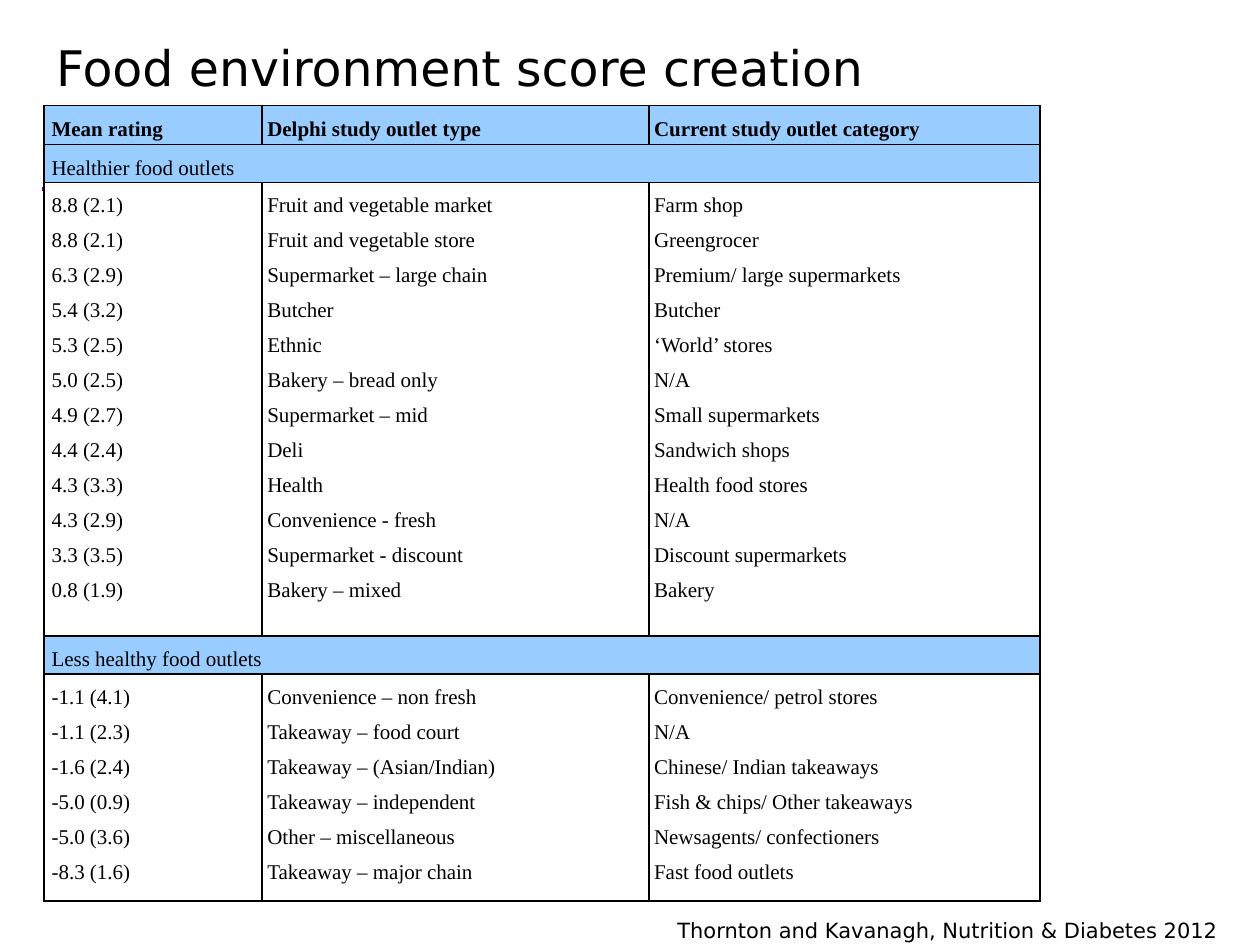
from dataclasses import dataclass

from pptx import Presentation
from pptx.dml.color import RGBColor
from pptx.enum.shapes import MSO_CONNECTOR, MSO_SHAPE
from pptx.enum.text import MSO_ANCHOR
from pptx.oxml import parse_xml
from pptx.oxml.ns import nsdecls
from pptx.util import Pt


@dataclass(frozen=True)
class Theme:
    ink: str = "000000"
    paper: str = "FFFFFF"
    band: str = "99CCFF"
    rule: str = "920049"
    sans: str = "DejaVu Sans"
    serif: str = "Times New Roman"
    title: int = 28
    body: int = 12


HEAD = ["Mean rating", "Delphi study outlet type", "Current study outlet category"]
GOOD = [
    ("8.8 (2.1)", "Fruit and vegetable market", "Farm shop"),
    ("8.8 (2.1)", "Fruit and vegetable store", "Greengrocer"),
    ("6.3 (2.9)", "Supermarket – large chain", "Premium/ large supermarkets"),
    ("5.4 (3.2)", "Butcher", "Butcher"),
    ("5.3 (2.5)", "Ethnic", "‘World’ stores"),
    ("5.0 (2.5)", "Bakery – bread only", "N/A"),
    ("4.9 (2.7)", "Supermarket – mid", "Small supermarkets"),
    ("4.4 (2.4)", "Deli", "Sandwich shops"),
    ("4.3 (3.3)", "Health", "Health food stores"),
    ("4.3 (2.9)", "Convenience - fresh", "N/A"),
    ("3.3 (3.5)", "Supermarket - discount", "Discount supermarkets"),
    ("0.8 (1.9)", "Bakery – mixed", "Bakery"),
]
POOR = [
    ("-1.1 (4.1)", "Convenience – non fresh", "Convenience/ petrol stores"),
    ("-1.1 (2.3)", "Takeaway – food court", "N/A"),
    ("-1.6 (2.4)", "Takeaway – (Asian/Indian)", "Chinese/ Indian takeaways"),
    ("-5.0 (0.9)", "Takeaway – independent", "Fish & chips/ Other takeaways"),
    ("-5.0 (3.6)", "Other – miscellaneous", "Newsagents/ confectioners"),
    ("-8.3 (1.6)", "Takeaway – major chain", "Fast food outlets"),
]


class Page:
    def __init__(self, slide, theme):
        self.slide = slide
        self.theme = theme

    def style(self, para, font, size, bold=False):
        for run in para.runs:
            run.font.name = font
            run.font.size = Pt(size)
            run.font.bold = bold
            run.font.color.rgb = RGBColor.from_string(self.theme.ink)

    def line(self, x, y, end):
        rule = self.slide.shapes.add_connector(
            MSO_CONNECTOR.STRAIGHT, Pt(x), Pt(y), Pt(end), Pt(y))
        rule.line.color.rgb = RGBColor.from_string(self.theme.rule)
        rule.line.width = Pt(1.75)
        rule._element.spPr.append(parse_xml(f"<a:effectLst {nsdecls('a')}/>"))

    def mask(self, x, y, w, h):
        box = self.slide.shapes.add_shape(MSO_SHAPE.RECTANGLE, Pt(x), Pt(y), Pt(w), Pt(h))
        box.shadow.inherit = False
        box.fill.solid()
        box.fill.fore_color.rgb = RGBColor.from_string(self.theme.paper)
        box.line.color.rgb = RGBColor.from_string(self.theme.paper)
        box.line.width = Pt(4)

    def text(self, words, x, y, w, h, size, top=3.6):
        frame = self.slide.shapes.add_textbox(Pt(x), Pt(y), Pt(w), Pt(h)).text_frame
        frame.word_wrap = True
        frame.margin_top = Pt(top)
        frame.text = words
        self.style(frame.paragraphs[0], self.theme.sans, size)

    def cell(self, cell, words, left, fill, bold=False):
        cell.margin_left = Pt(left)
        cell.margin_right = cell.margin_top = cell.margin_bottom = 0
        cell.vertical_anchor = MSO_ANCHOR.TOP
        cell.text_frame.text = words
        for para in cell.text_frame.paragraphs:
            para.line_spacing = 1.5
            self.style(para, self.theme.serif, self.theme.body, bold)
        # Borders come before the fill in the cell properties
        props = cell._tc.get_or_add_tcPr()
        for side in "LRTB":
            props.append(parse_xml(
                f'<a:ln{side} {nsdecls("a")} w="{Pt(1)}"><a:solidFill>'
                f'<a:srgbClr val="{self.theme.ink}"/></a:solidFill></a:ln{side}>'))
        cell.fill.solid()
        cell.fill.fore_color.rgb = RGBColor.from_string(fill)

    def table(self, rows, x, y, widths, heights):
        shape = self.slide.shapes.add_table(
            len(rows), len(widths), Pt(x), Pt(y), Pt(sum(widths)), Pt(sum(heights)))
        grid = shape.table
        grid.first_row = grid.horz_banding = False
        for col, width in zip(grid.columns, widths):
            col.width = Pt(width)
        for i, (row, height) in enumerate(zip(rows, heights)):
            grid.rows[i].height = Pt(height)
            band = len(row) == 1
            if band:
                grid.cell(i, 0).merge(grid.cell(i, len(widths) - 1))
            fill = self.theme.band if band or i == 0 else self.theme.paper
            for j in range(len(widths)):
                words = row[j] if j < len(row) else ""
                self.cell(grid.cell(i, j), words, 3 if j else 4.3, fill, i == 0)


def stack(items):
    """Join each column of a group into one cell, a paragraph per outlet."""
    return ["\n".join(col) for col in zip(*items)]


def main():
    deck = Presentation()
    deck.slide_width, deck.slide_height = Pt(720), Pt(540)
    theme = Theme()
    page = Page(deck.slides.add_slide(deck.slide_layouts[6]), theme)

    # Rule under the title, with its right part masked
    page.line(24, 108, 696)
    page.mask(475, 100, 225.5, 22)

    # Title
    page.text("Food environment score creation", 25, 15, 587.5, 64, theme.title, 6.5)

    # Outlet ratings
    rows = [HEAD, ["Healthier food outlets"], stack(GOOD),
            ["Less healthy food outlets"], stack(POOR)]
    page.table(rows, 25.2, 60.4, [124.6, 221, 223.5], [22.3, 13.7, 186.5, 13.7, 92.2])

    # Source
    page.text("Thornton and Kavanagh, Nutrition & Diabetes 2012",
              380, 520.5, 360, 21.5, theme.body)

    deck.save("out.pptx")


if __name__ == "__main__":
    main()
